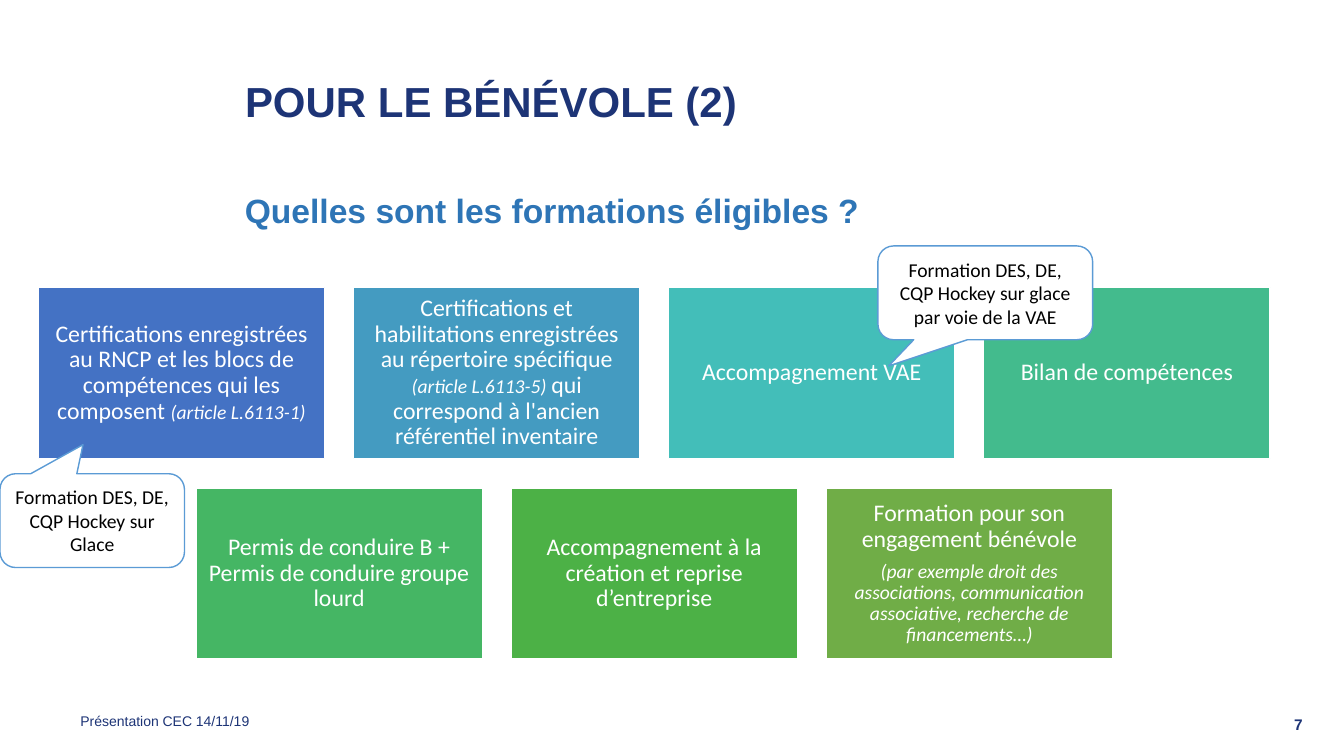
from pptx import Presentation, util as u
from pptx.dml import color
from pptx.enum import shapes, text

NAVY, BLUE, WHITE, BLACK = "1D3476", "2E75B6", "FFFFFF", "000000"
BOX_WIDTH, BOX_HEIGHT = 204.6, 122.4
LEFT, PITCH = 27.4, 225.1
TOP, ROW_PITCH = 205.2, 143.3
NOTE = {"size": 14, "italic": True}
ROWS = [
    [
        ("4472C4", [[("Certifications enregistrées au RNCP et les blocs de compétences "
                      "qui les composent ", {}), ("(article L.6113-1)", NOTE)]]),
        ("449BC1", [[("Certifications et habilitations enregistrées au répertoire spécifique ", {}),
                     ("(article L.6113-5) ", NOTE),
                     ("qui correspond à l'ancien référentiel inventaire", {})]]),
        ("43BEB9", [[("Accompagnement VAE", {})]]),
        ("43BB8D", [[("Bilan de compétences", {})]]),
    ],
    [
        ("45B664", [[("Permis de conduire B + Permis de conduire groupe lourd", {})]]),
        ("4CB146", [[("Accompagnement à la création et reprise d’entreprise", {})]]),
        ("70AD47", [[("Formation pour son engagement bénévole", {})],
                    [("(par exemple droit des associations, communication associative, "
                      "recherche de financements…)", NOTE)]]),
    ],
]


def rgb(value):
    return color.RGBColor.from_string(value)


class SlideBuilder:
    """Holds the style and the current slide, and adds each kind of element."""

    box_font = {"name": "Calibri", "size": 17, "color": WHITE}
    callout_font = {"name": "Calibri", "size": 14, "color": BLACK}
    heading_font = {"name": "Arial", "bold": True}

    def __init__(self, presentation):
        self.slide = presentation.slides.add_slide(presentation.slide_layouts[5])

    def fill_text(self, shape, paragraphs, font, anchor, align, spacing=1.0, after=0, inset=None):
        frame = shape.text_frame
        frame.word_wrap = True
        frame.auto_size = text.MSO_AUTO_SIZE.NONE
        frame.vertical_anchor = anchor
        if inset is not None:
            for side in ("left", "top", "right", "bottom"):
                setattr(frame, f"margin_{side}", u.Pt(inset))
        for index, runs in enumerate(paragraphs):
            paragraph = frame.paragraphs[0] if index == 0 else frame.add_paragraph()
            formats = {"alignment": align, "line_spacing": spacing,
                       "space_before": u.Pt(0), "space_after": u.Pt(after)}
            for name, value in formats.items():
                setattr(paragraph, name, value)
            for words, changes in runs:
                run = paragraph.add_run()
                run.text = words
                for name, value in {**font, **changes}.items():
                    if name == "color":
                        run.font.color.rgb = rgb(value)
                    else:
                        setattr(run.font, name, u.Pt(value) if name == "size" else value)

    def title(self, words, left, top, width, height):
        shape = self.slide.shapes.title
        place = {"left": left, "top": top, "width": width, "height": height}
        for name, value in place.items():
            setattr(shape, name, u.Pt(value))
        self.fill_text(shape, [[(words, {})]], {**self.heading_font, "size": 30, "color": NAVY},
                       text.MSO_ANCHOR.MIDDLE, text.PP_ALIGN.LEFT, 0.9)

    def label(self, words, place, font, anchor=text.MSO_ANCHOR.TOP, spacing=1.0):
        shape = self.slide.shapes.add_textbox(*map(u.Pt, place))
        self.fill_text(shape, [[(words, {})]], font, anchor, text.PP_ALIGN.LEFT, spacing)

    def filled_shape(self, kind, place, fill, line):
        shape = self.slide.shapes.add_shape(kind, *map(u.Pt, place))
        shape.shadow.inherit = False
        shape.fill.solid()
        shape.fill.fore_color.rgb = rgb(fill)
        shape.line.color.rgb = rgb(line)
        shape.line.width = u.Pt(1)
        return shape

    def box(self, left, top, fill, paragraphs):
        shape = self.filled_shape(shapes.MSO_SHAPE.RECTANGLE,
                                  (left, top, BOX_WIDTH, BOX_HEIGHT), fill, WHITE)
        self.fill_text(shape, paragraphs, self.box_font, text.MSO_ANCHOR.MIDDLE,
                       text.PP_ALIGN.CENTER, 0.9, 6, 5)

    def callout(self, words, place, pointer):
        shape = self.filled_shape(shapes.MSO_SHAPE.ROUNDED_RECTANGULAR_CALLOUT,
                                  place, WHITE, "5B9BD5")
        for index, value in enumerate(pointer):
            shape.adjustments[index] = value
        self.fill_text(shape, [[(words, {})]], self.callout_font,
                       text.MSO_ANCHOR.MIDDLE, text.PP_ALIGN.CENTER)


def main():
    presentation = Presentation()
    presentation.slide_width, presentation.slide_height = u.Pt(960), u.Pt(540)
    builder = SlideBuilder(presentation)
    heading = builder.heading_font

    builder.title("POUR LE BÉNÉVOLE (2)", 167.8, 46.8, 749.5, 54.7)
    builder.label("Quelles sont les formations éligibles ?", (167.8, 135.4, 749.5, 332.6),
                  {**heading, "size": 24, "color": BLUE}, spacing=0.9)
    builder.label("7", (917.3, 506.9, 28.8, 20.9), {**heading, "size": 11, "color": NAVY})

    for row, boxes in enumerate(ROWS):
        start = LEFT + (len(ROWS[0]) - len(boxes)) * PITCH / 2
        for column, (fill, paragraphs) in enumerate(boxes):
            builder.box(start + column * PITCH, TOP + row * ROW_PITCH, fill, paragraphs)

    builder.callout("Formation DES, DE, CQP Hockey sur Glace",
                    (0, 338.4, 131.8, 67), (-0.05, -0.81))
    builder.callout("Formation DES, DE, CQP Hockey sur glace par voie de la VAE",
                    (627.1, 175.7, 153.4, 67), (-0.45, 0.78))
    builder.label("Présentation CEC 14/11/19", (50.4, 500.4, 216, 28.8),
                  {"name": "Arial", "size": 10, "color": NAVY}, text.MSO_ANCHOR.MIDDLE)
    presentation.save("out.pptx")


if __name__ == "__main__":
    main()
